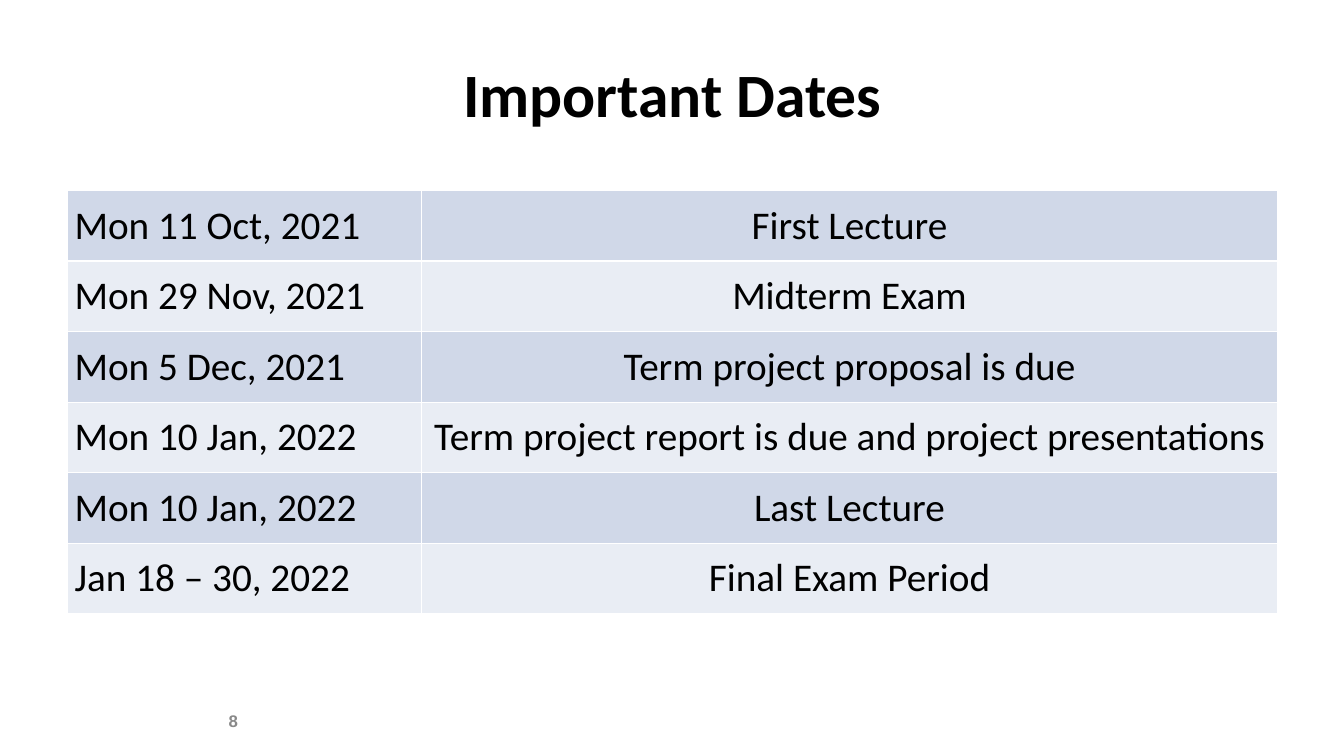
"""Builds the course slide listing the important dates of the term."""
from lxml import etree
from pptx import Presentation
from pptx.dml.color import RGBColor
from pptx.enum import text as t
from pptx.oxml import ns
from pptx.util import Inches, Pt

COLOURS = {"ink": "000000", "number": "898989", "odd": "D0D8E8",
           "even": "E9EDF4", "border": "FFFFFF"}
DATES = [
    ("Mon 11 Oct, 2021", "First Lecture"),
    ("Mon 29 Nov, 2021", "Midterm Exam"),
    ("Mon 5 Dec, 2021", "Term project proposal is due"),
    ("Mon 10 Jan, 2022", "Term project report is due and project presentations"),
    ("Mon 10 Jan, 2022", "Last Lecture"),
    ("Jan 18 – 30, 2022", "Final Exam Period"),
]
COLUMN_WIDTHS = (3.51, 8.49)
ROW_HEIGHT = 0.7


def write(frame, wording, size, align, font="Calibri", colour="ink", bold=False):
    paragraph = frame.paragraphs[0]
    paragraph.alignment = align
    run = paragraph.add_run()
    run.text = wording
    run.font.name = font
    run.font.size = Pt(size)
    run.font.bold = bold
    run.font.color.rgb = RGBColor.from_string(COLOURS[colour])


def place(box, left, top, width, height):
    box.left, box.top = Inches(left), Inches(top)
    box.width, box.height = Inches(width), Inches(height)


def add_title(slide):
    title = slide.shapes.title
    place(title, 0.67, 0.3, 12, 1.25)
    title.text_frame.auto_size = t.MSO_AUTO_SIZE.NONE
    title.text_frame.vertical_anchor = t.MSO_ANCHOR.MIDDLE
    write(title.text_frame, "Important Dates", 44, t.PP_ALIGN.CENTER, bold=True)


def add_borders(cell):
    properties = cell._tc.get_or_add_tcPr()
    for position, side in enumerate(("a:lnL", "a:lnR", "a:lnT", "a:lnB")):
        line = etree.Element(ns.qn(side), w=str(Pt(1)))
        fill = etree.SubElement(line, ns.qn("a:solidFill"))
        etree.SubElement(fill, ns.qn("a:srgbClr"), val=COLOURS["border"])
        properties.insert(position, line)


def format_cell(cell, wording, align, band):
    cell.margin_left = cell.margin_right = Inches(0.07)
    cell.margin_top = cell.margin_bottom = 0
    cell.vertical_anchor = t.MSO_ANCHOR.MIDDLE
    cell.fill.solid()
    cell.fill.fore_color.rgb = RGBColor.from_string(COLOURS[band])
    write(cell.text_frame, wording, 28, align)
    add_borders(cell)


def add_dates(slide):
    dates = slide.shapes.add_table(
        len(DATES), len(COLUMN_WIDTHS), Inches(0.67), Inches(1.89),
        Inches(sum(COLUMN_WIDTHS)), Inches(ROW_HEIGHT * len(DATES))).table
    dates.first_row = False
    for column, width in zip(dates.columns, COLUMN_WIDTHS):
        column.width = Inches(width)
    for index, (day, event) in enumerate(DATES):
        band = "even" if index % 2 else "odd"
        dates.rows[index].height = Inches(ROW_HEIGHT)
        format_cell(dates.cell(index, 0), day, t.PP_ALIGN.LEFT, band)
        format_cell(dates.cell(index, 1), event, t.PP_ALIGN.CENTER, band)


def add_page_number(slide):
    number = slide.shapes.add_textbox(
        Inches(2.17), Inches(6.95), Inches(2.33), Inches(0.4)).text_frame
    number.word_wrap = True
    number.vertical_anchor = t.MSO_ANCHOR.MIDDLE
    write(number, "8", 12, t.PP_ALIGN.LEFT, "Arial", "number", bold=True)


def main():
    deck = Presentation()
    deck.slide_width, deck.slide_height = Inches(13.33), Inches(7.5)
    slide = deck.slides.add_slide(deck.slide_layouts[5])
    add_title(slide)
    add_dates(slide)
    add_page_number(slide)
    deck.save("out.pptx")


if __name__ == "__main__":
    main()
